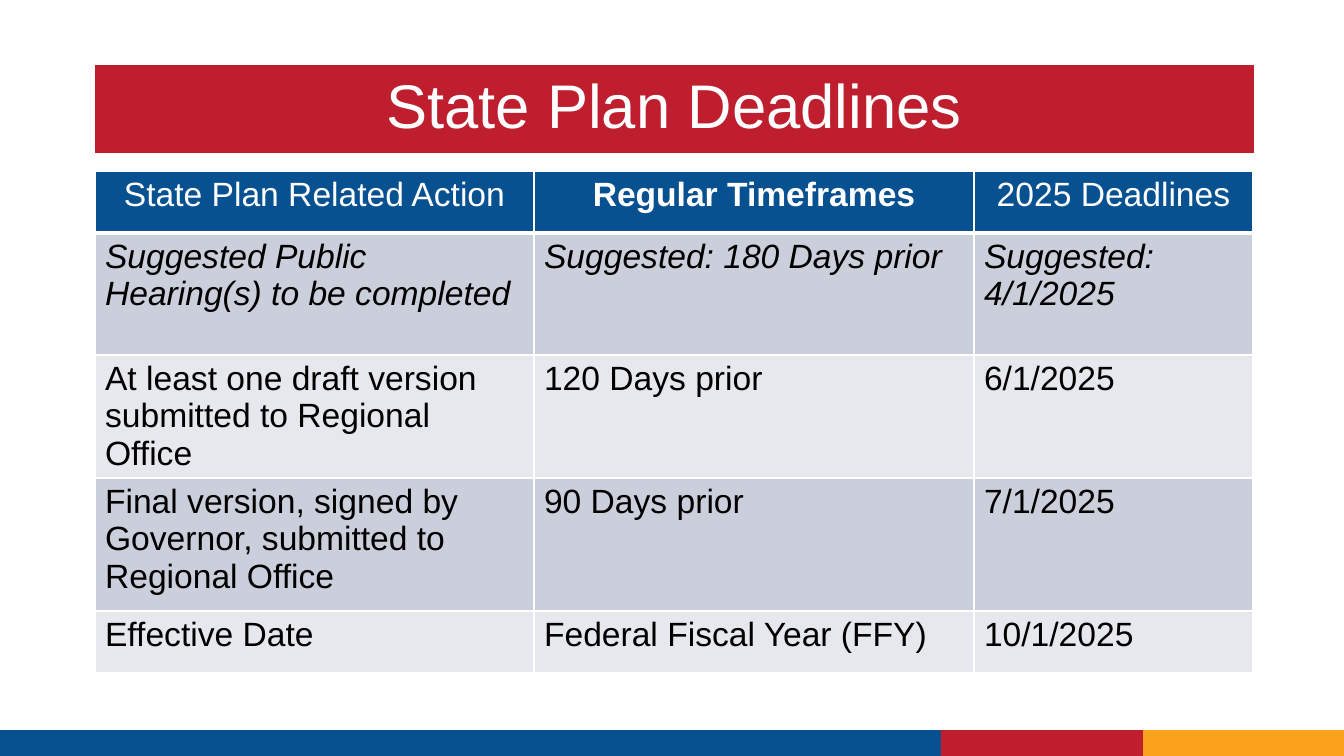
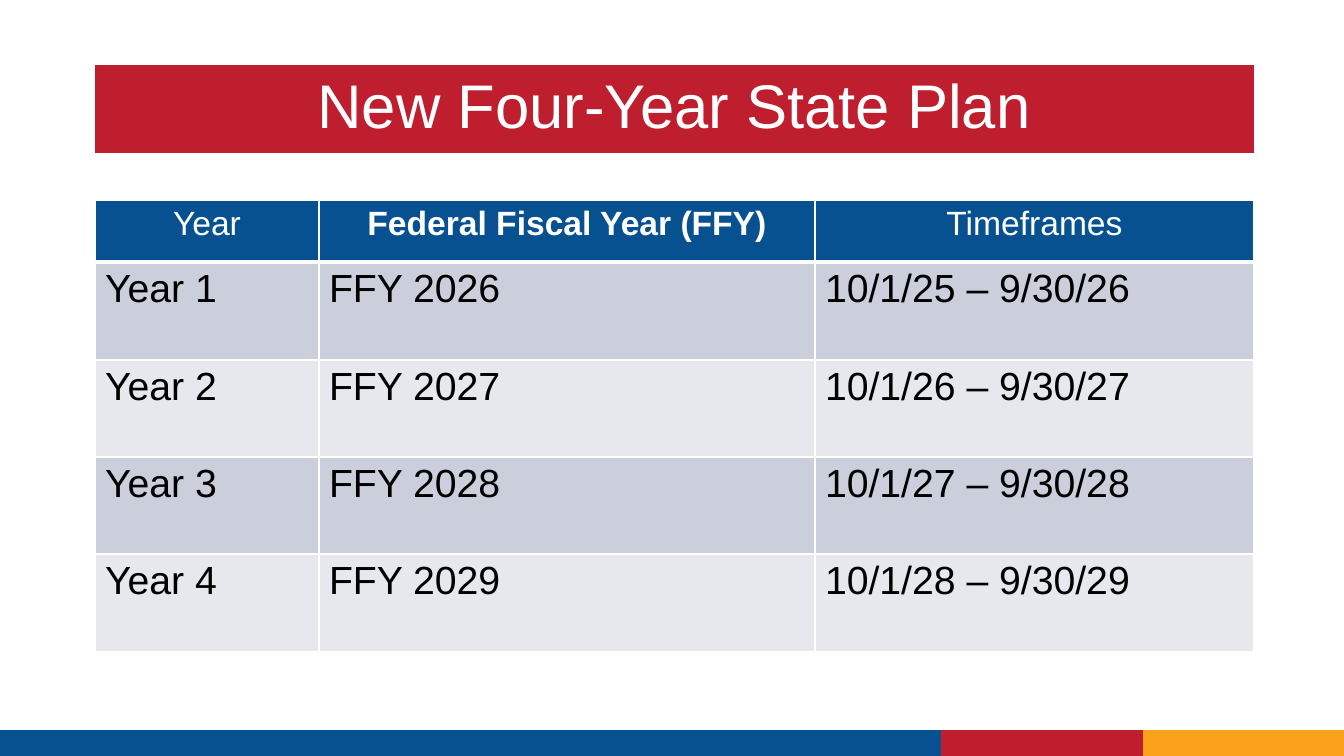
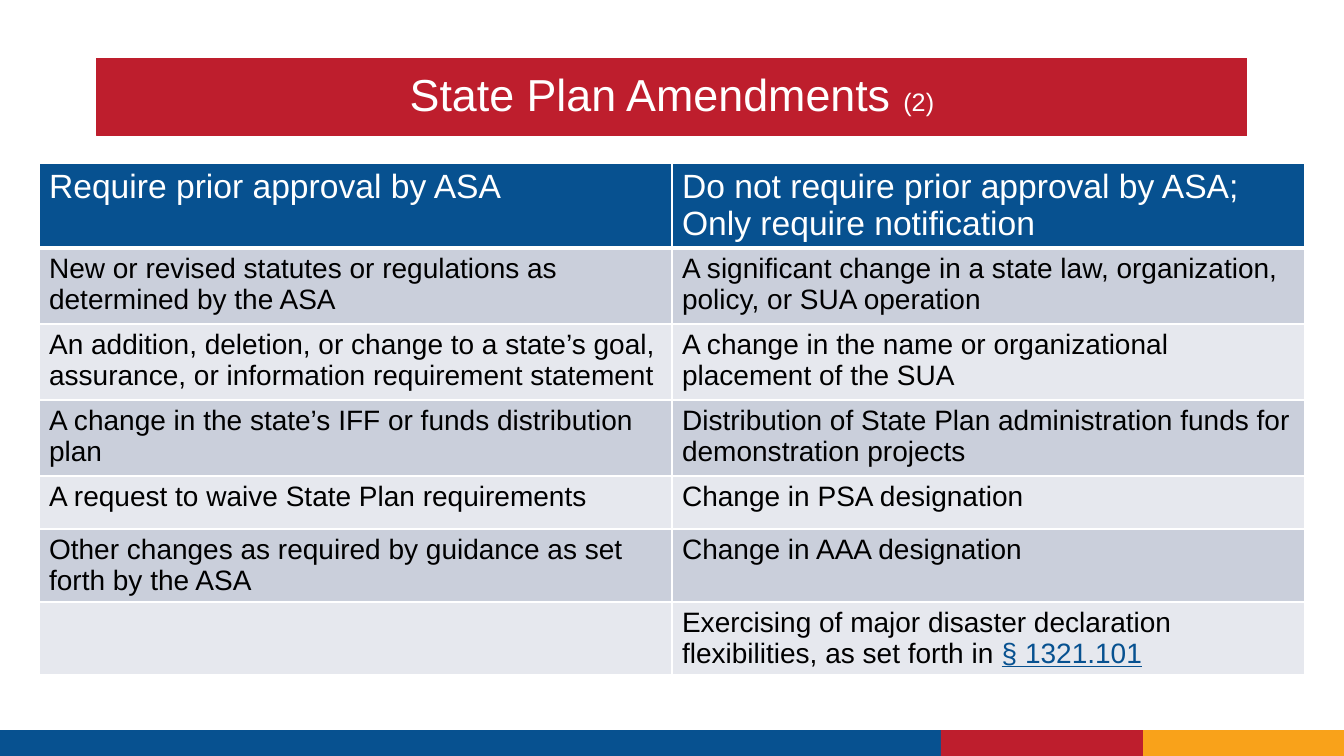
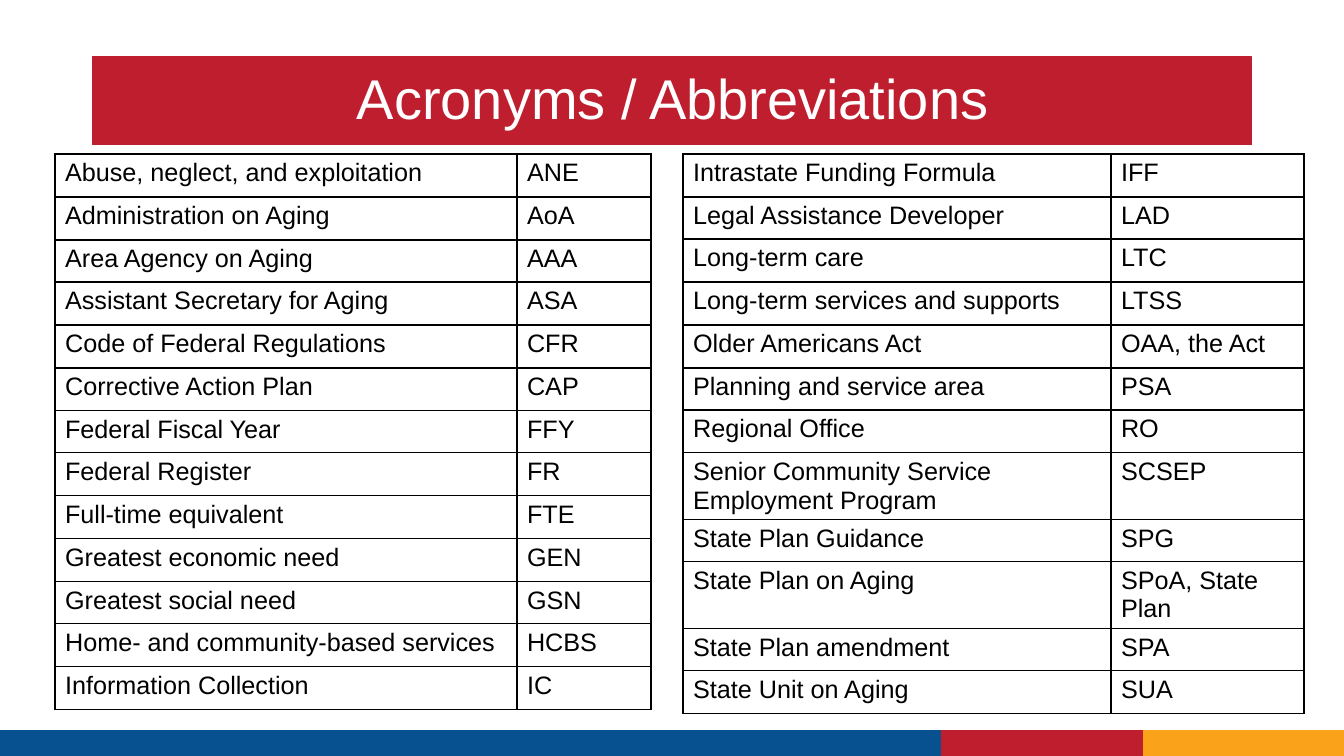
from lxml.etree import SubElement
from pptx import Presentation
from pptx.dml.color import RGBColor
from pptx.enum.shapes import MSO_SHAPE as Preset
from pptx.enum.text import MSO_ANCHOR as Anchor, PP_ALIGN as Align
from pptx.oxml.ns import qn
from pptx.util import Emu, Pt

EMU_PER_INCH, PX_PER_INCH = 914400, 100.8
WIDTH, HEIGHT = 1344, 756
FONT = "Arial"
BLUE, RED, ORANGE = "075190", "BE1E2D", "F9A21A"
WHITE, BLACK = "FFFFFF", "000000"
STRIPES = ("CACFDB", "E6E8EE")
FOOTER_BANDS = ((0, 1303, BLUE), (1142, 202, ORANGE), (941, 202, RED))


def px(length):
    return Emu(round(length * EMU_PER_INCH / PX_PER_INCH))


def color(value):
    return RGBColor.from_string(value)


def even(total, count):
    """Split a length into whole parts that differ by at most one."""
    edges = [round(total * i / count) for i in range(count + 1)]
    return [end - start for start, end in zip(edges, edges[1:])]


def write(frame, text, align=Align.LEFT, spacing=None, **style):
    """Fill the first paragraph with a string, or with (string, style) pieces."""
    paragraph = frame.paragraphs[0]
    paragraph.alignment = align
    if spacing:
        paragraph.line_spacing = spacing
    pieces = [(text, {})] if isinstance(text, str) else text
    for words, changes in pieces:
        look = {"size": 24, "ink": BLACK, "bold": False, "italic": False,
                "underline": False, **style, **changes}
        run = paragraph.add_run()
        run.text = words
        font = run.font
        font.name, font.size = FONT, Pt(look["size"])
        font.color.rgb = color(look["ink"])
        font.bold, font.italic = look["bold"], look["italic"]
        font.underline = look["underline"]


def set_borders(cell, ink, top=1, bottom=1):
    """Add cell borders, which must come before the fill."""
    properties = cell._tc.get_or_add_tcPr()
    sides = (("L", 1), ("R", 1), ("T", top), ("B", bottom))
    for place, (side, points) in enumerate(sides):
        line = SubElement(properties, qn(f"a:ln{side}"), w=str(Pt(points)))
        fill = SubElement(line, qn("a:solidFill"))
        SubElement(fill, qn("a:srgbClr"), val=ink)
        properties.insert(place, line)


class Deck:
    def __init__(self):
        self.show = Presentation()
        self.show.slide_width, self.show.slide_height = px(WIDTH), px(HEIGHT)
        self.slide = None

    def new_slide(self):
        self.slide = self.show.slides.add_slide(self.show.slide_layouts[6])
        for left, width, fill in FOOTER_BANDS:
            self.band(left, 730, width, HEIGHT - 730, fill)

    def band(self, left, top, width, height, fill, outlined=False):
        band = self.slide.shapes.add_shape(
            Preset.RECTANGLE, px(left), px(top), px(width), px(height))
        band.shadow.inherit = False
        band.fill.solid()
        band.fill.fore_color.rgb = color(fill)
        if outlined:
            band.line.color.rgb = color(fill)
            band.line.width = Pt(0.75)
        else:
            band.line.fill.background()
        return band

    def title(self, text, left=95, top=65, width=1159, height=88, size=44,
              outlined=False):
        frame = self.band(left, top, width, height, RED, outlined).text_frame
        frame.word_wrap = True
        frame.vertical_anchor = Anchor.MIDDLE
        write(frame, text, Align.CENTER, 0.9, size=size, ink=WHITE)

    def grid(self, left, top, columns, heights):
        table = self.slide.shapes.add_table(
            len(heights), len(columns), px(left), px(top),
            px(sum(columns)), px(sum(heights))).table
        table.horz_banding = False
        for column, width in zip(table.columns, columns):
            column.width = px(width)
        for row, height in zip(table.rows, heights):
            row.height = px(height)
        return table

    def striped_table(self, left, top, columns, heights, rows, size=24,
                      header_align=Align.CENTER, bold_header=None,
                      italic_row=None):
        table = self.grid(left, top, columns, heights)
        for r, row in enumerate(rows):
            for c, text in enumerate(row):
                cell = table.cell(r, c)
                cell.fill.solid()
                cell.fill.fore_color.rgb = color(
                    STRIPES[(r - 1) % 2] if r else BLUE)
                set_borders(cell, WHITE, top=3 if r == 1 else 1,
                            bottom=1 if r else 3)
                if r:
                    write(cell.text_frame, text, size=size,
                          italic=r == italic_row)
                else:
                    write(cell.text_frame, text, header_align, ink=WHITE,
                          bold=c == bold_header)

    def ruled_table(self, left, top, columns, heights, rows):
        table = self.grid(left, top, columns, heights)
        table.first_row = False
        for r, row in enumerate(rows):
            for c, text in enumerate(row):
                cell = table.cell(r, c)
                cell.fill.background()
                set_borders(cell, BLACK)
                write(cell.text_frame, text, size=18)


def deadlines(deck):
    deck.new_slide()
    deck.title("State Plan Deadlines")
    deck.striped_table(95, 171, (439, 440, 279), (62, 122, 123, 133, 62), (
        ("State Plan Related Action", "Regular Timeframes", "2025 Deadlines"),
        ("Suggested Public Hearing(s) to be completed",
         "Suggested: 180 Days prior", "Suggested: 4/1/2025"),
        ("At least one draft version submitted to Regional Office",
         "120 Days prior", "6/1/2025"),
        ("Final version, signed by Governor, submitted to Regional Office",
         "90 Days prior", "7/1/2025"),
        ("Effective Date", "Federal Fiscal Year (FFY)", "10/1/2025"),
    ), bold_header=1, italic_row=1)


def four_year_plan(deck):
    deck.new_slide()
    deck.title("New Four-Year State Plan")
    years = [(f"Year {n}", f"FFY {2025 + n}", f"10/1/{24 + n} – 9/30/{25 + n}")
             for n in range(1, 5)]
    deck.striped_table(
        95, 200, (224, 496, 439), [62] + even(390, 4),
        [("Year", "Federal Fiscal Year (FFY)", "Timeframes")] + years,
        size=28, bold_header=1)


def amendments(deck):
    deck.new_slide()
    deck.title([("State Plan Amendments ", {}), ("(2)", {"size": 18})],
               97, 58, 1150, 78, size=32, outlined=True)
    deck.striped_table(39, 163, (633, 633), (84, 76, 76, 76, 53, 73, 72), (
        ("Require prior approval by ASA",
         "Do not require prior approval by ASA; Only require notification"),
        ("New or revised statutes or regulations as determined by the ASA",
         "A significant change in a state law, organization, policy, "
         "or SUA operation"),
        ("An addition, deletion, or change to a state’s goal, assurance, "
         "or information requirement statement",
         "A change in the name or organizational placement of the SUA"),
        ("A change in the state’s IFF or funds distribution plan",
         "Distribution of State Plan administration funds for "
         "demonstration projects"),
        ("A request to waive State Plan requirements",
         "Change in PSA designation"),
        ("Other changes as required by guidance as set forth by the ASA",
         "Change in AAA designation"),
        ((), [("Exercising of major disaster declaration flexibilities, "
               "as set forth in ", {}),
              ("§ 1321.101", {"ink": BLUE, "underline": True})]),
    ), size=20, header_align=Align.LEFT)


def acronyms(deck):
    deck.new_slide()
    deck.title("Acronyms / Abbreviations", 93, 57, size=40, outlined=True)
    deck.ruled_table(55, 154, (462, 134), even(556, 13), (
        ("Abuse, neglect, and exploitation", "ANE"),
        ("Administration on Aging", "AoA"),
        ("Area Agency on Aging", "AAA"),
        ("Assistant Secretary for Aging", "ASA"),
        ("Code of Federal Regulations", "CFR"),
        ("Corrective Action Plan", "CAP"),
        ("Federal Fiscal Year", "FFY"),
        ("Federal Register", "FR"),
        ("Full-time equivalent", "FTE"),
        ("Greatest economic need", "GEN"),
        ("Greatest social need", "GSN"),
        ("Home- and community-based services", "HCBS"),
        ("Information Collection", "IC"),
    ))
    two_lines = 67
    heights = even(299, 7) + [two_lines, 42, two_lines] + even(85, 2)
    deck.ruled_table(683, 154, (428, 193), heights, (
        ("Intrastate Funding Formula", "IFF"),
        ("Legal Assistance Developer", "LAD"),
        ("Long-term care", "LTC"),
        ("Long-term services and supports", "LTSS"),
        ("Older Americans Act", "OAA, the Act"),
        ("Planning and service area", "PSA"),
        ("Regional Office", "RO"),
        ("Senior Community Service Employment Program", "SCSEP"),
        ("State Plan Guidance", "SPG"),
        ("State Plan on Aging", "SPoA, State Plan"),
        ("State Plan amendment", "SPA"),
        ("State Unit on Aging", "SUA"),
    ))


def main():
    deck = Deck()
    for build in (deadlines, four_year_plan, amendments, acronyms):
        build(deck)
    deck.show.save("out.pptx")


if __name__ == "__main__":
    main()
